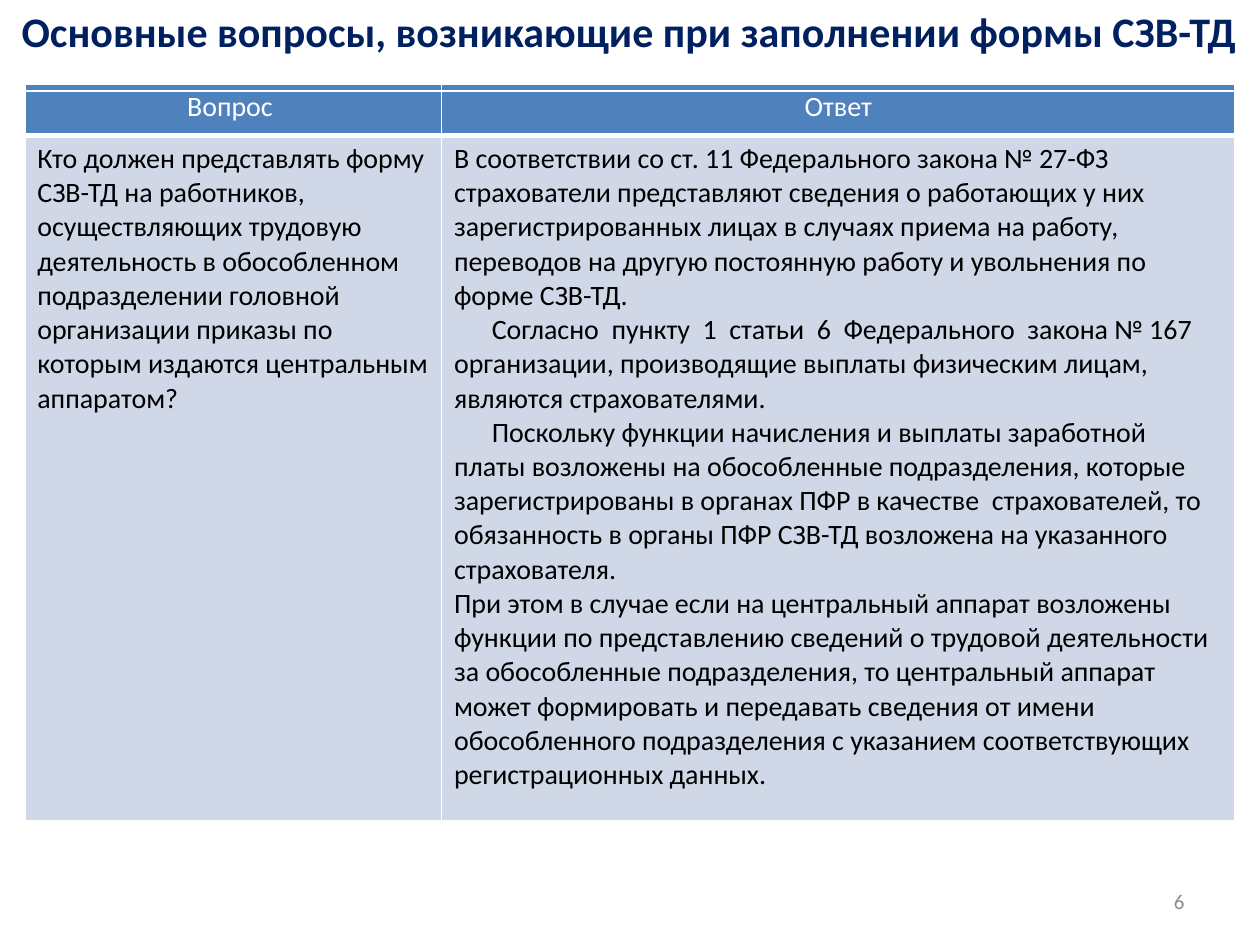
from dataclasses import dataclass

from lxml import etree
from pptx import Presentation
from pptx.dml.color import RGBColor
from pptx.enum import text as t
from pptx.oxml.ns import qn
from pptx.util import Cm, Pt

HEX = {"navy": "002060", "blue": "4F81BD", "pale": "D0D8E8",
       "white": "FFFFFF", "black": "000000", "gray": "8C8C8C"}
FONT = "Calibri"
LEFT, MID, RIGHT = t.PP_ALIGN.LEFT, t.PP_ALIGN.CENTER, t.PP_ALIGN.RIGHT


@dataclass
class Style:
    size: int
    color: str
    align: t.PP_ALIGN = LEFT
    bold: bool = False


@dataclass
class Line:
    text: str
    indent: float = 0


@dataclass
class Row:
    cells: list[list[Line]]
    high: float
    style: Style
    fill: str = ""
    top: int = 1
    base: int = 1


def write(frame, lines: list[Line], style: Style) -> None:
    for i, line in enumerate(lines):
        para = frame.add_paragraph() if i else frame.paragraphs[0]
        para.text = line.text
        para.alignment = style.align
        font = para.font
        font.name, font.size, font.bold = FONT, Pt(style.size), style.bold
        font.color.rgb = RGBColor.from_string(HEX[style.color])
        if line.indent:
            para._p.get_or_add_pPr().set("indent", str(Cm(line.indent)))


def edge(cell, side: str, width: int) -> None:
    """Add one white cell border; call before the fill is set."""
    line = etree.SubElement(cell._tc.get_or_add_tcPr(), qn(f"a:ln{side}"), w=str(Pt(width)))
    fill = etree.SubElement(line, qn("a:solidFill"))
    etree.SubElement(fill, qn("a:srgbClr"), val=HEX["white"])


def grid(slide, left: float, top: float, cols: list[float], rows: list[Row]) -> None:
    """Draw a table; rows without a fill have no borders either."""
    high = sum(row.high for row in rows)
    table = slide.shapes.add_table(len(rows), len(cols), Cm(left), Cm(top),
                                   Cm(sum(cols)), Cm(high)).table
    table.first_row = table.horz_banding = False
    for col, wide in zip(table.columns, cols):
        col.width = Cm(wide)
    for r, row in enumerate(rows):
        table.rows[r].height = Cm(row.high)
        for c, lines in enumerate(row.cells):
            cell = table.cell(r, c)
            if row.fill:
                for side, width in zip("LRTB", (1, 1, row.top, row.base)):
                    edge(cell, side, width)
                cell.fill.solid()
                cell.fill.fore_color.rgb = RGBColor.from_string(HEX[row.fill])
            else:
                cell.fill.background()
            write(cell.text_frame, lines, row.style)


QUERY = [Line("Кто должен представлять форму СЗВ-ТД на работников, осуществляющих "
              "трудовую деятельность в обособленном подразделении головной организации "
              "приказы по которым издаются центральным аппаратом?")]
REPLY = [
    Line("В соответствии со ст. 11 Федерального закона № 27-ФЗ страхователи "
         "представляют сведения о работающих у них зарегистрированных лицах в случаях "
         "приема на работу, переводов на другую постоянную работу и увольнения по "
         "форме СЗВ-ТД."),
    Line("Согласно  пункту  1  статьи  6  Федерального  закона № 167 организации, "
         "производящие выплаты физическим лицам, являются страхователями.", 0.76),
    Line("Поскольку функции начисления и выплаты заработной платы возложены на "
         "обособленные подразделения, которые зарегистрированы в органах ПФР в "
         "качестве  страхователей, то обязанность в органы ПФР СЗВ-ТД возложена на "
         "указанного страхователя.", 0.76),
    Line("При этом в случае если на центральный аппарат возложены функции по "
         "представлению сведений о трудовой деятельности за обособленные "
         "подразделения, то центральный аппарат может формировать и передавать "
         "сведения от имени обособленного подразделения с указанием соответствующих "
         "регистрационных данных."),
]
TITLE = [Line("Основные вопросы, возникающие при заполнении формы СЗВ-ТД")]


def main() -> None:
    deck = Presentation()
    deck.slide_width, deck.slide_height = Cm(25.4), Cm(19.05)
    slide = deck.slides.add_slide(deck.slide_layouts[6])

    box = slide.shapes.add_textbox(Cm(18.2), Cm(17.66), Cm(5.93), Cm(1.01))
    box.text_frame.word_wrap = True
    box.text_frame.vertical_anchor = t.MSO_ANCHOR.MIDDLE
    write(box.text_frame, [Line("6")], Style(12, "gray", RIGHT))

    grid(slide, 0.5, 1.69, [8.4, 16], [
        Row([[Line("Вопрос ")], [Line("Ответ")]], 1.04,
            Style(16, "white", MID), "blue", base=3),
        Row([QUERY, REPLY], 13.82, Style(16, "black"), "pale", top=3),
    ])
    grid(slide, 0.13, 0.03, [25.1],
         [Row([TITLE], 1.8, Style(24, "navy", MID, True))])
    deck.save("out.pptx")


if __name__ == "__main__":
    main()
